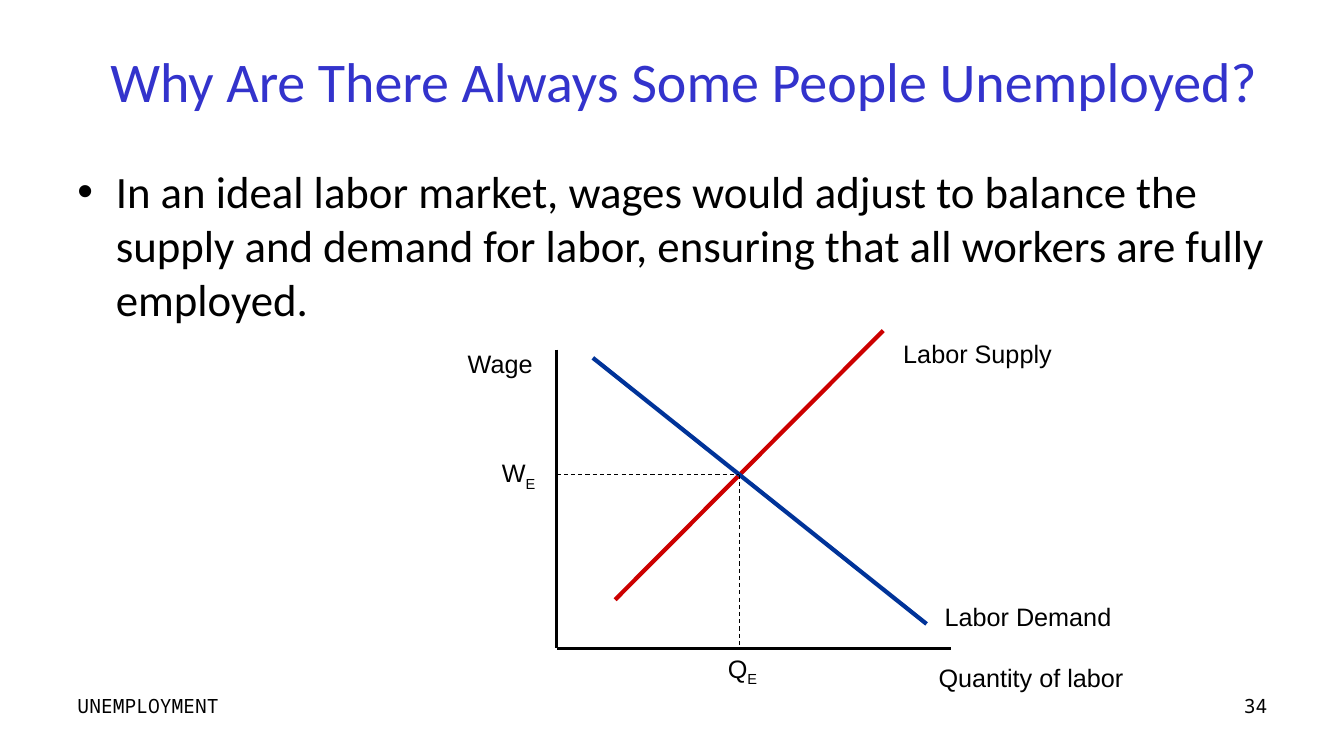
from lxml import etree
from pptx import Presentation
from pptx import util as u
from pptx.dml.color import RGBColor
from pptx.enum import dml, shapes, text
from pptx.oxml.ns import qn

EMU_PER_PX = 9144  # 100 px to the inch
BLACK = "000000"
AXIS_LEFT, AXIS_BOTTOM = 552, 643
EQUILIBRIUM_X, EQUILIBRIUM_Y = 733, 471


def px(length):
    return u.Emu(length * EMU_PER_PX)


def color(hex_string):
    return RGBColor.from_string(hex_string)


def style(paragraph, size, font_name, hex_string=BLACK, align=text.PP_ALIGN.LEFT):
    paragraph.alignment = align
    paragraph.font.size = u.Pt(size)
    paragraph.font.name = font_name
    paragraph.font.color.rgb = color(hex_string)


def place_title(slide, content, left, top, width, height):
    title = slide.shapes.title
    title.left, title.top, title.width, title.height = map(px, (left, top, width, height))
    frame = title.text_frame
    frame.text = content
    frame.word_wrap = True
    frame.auto_size = text.MSO_AUTO_SIZE.NONE
    frame.vertical_anchor = text.MSO_ANCHOR.MIDDLE
    paragraph = frame.paragraphs[0]
    paragraph.line_spacing = 0.9
    style(paragraph, 40, "Calibri", "3333CC", text.PP_ALIGN.CENTER)


def add_text(parent, content, left, top, width, height):
    """Add a wrapping text box and return its only paragraph."""
    box = parent.shapes.add_textbox(*map(px, (left, top, width, height)))
    box.text_frame.word_wrap = True
    paragraph = box.text_frame.paragraphs[0]
    paragraph.add_run().text = content
    return paragraph


def add_bullet(paragraph, indent):
    properties = paragraph._p.get_or_add_pPr()
    properties.set("marL", str(px(indent)))
    properties.set("indent", str(px(-indent)))
    etree.SubElement(properties, qn("a:buFont")).set("typeface", "Arial")
    etree.SubElement(properties, qn("a:buChar")).set("char", "•")


def add_label(diagram, content, left, top, width, subscript=""):
    paragraph = add_text(diagram, content, left, top, width, 40)
    style(paragraph, 18, "Arial")
    if subscript:
        run = paragraph.add_run()
        run.text = subscript
        run._r.get_or_add_rPr().set("baseline", "-25000")


def add_line(diagram, start, end, width, hex_string=BLACK, dashed=False):
    connector = diagram.shapes.add_connector(
        shapes.MSO_CONNECTOR.STRAIGHT, *map(px, (*start, *end)))
    connector.line.width = u.Pt(width)
    connector.line.color.rgb = color(hex_string)
    if dashed:
        connector.line.dash_style = dml.MSO_LINE.DASH
    etree.SubElement(connector._element.spPr, qn("a:effectLst"))


def add_labor_market(slide):
    diagram = slide.shapes.add_group_shape()
    origin = (AXIS_LEFT, AXIS_BOTTOM)
    equilibrium = (EQUILIBRIUM_X, EQUILIBRIUM_Y)

    add_line(diagram, (AXIS_LEFT, 347), origin, 2.25)
    add_line(diagram, origin, (943, AXIS_BOTTOM), 2.25)
    add_line(diagram, (610, 595), (876, 328), 3, "CC0000")
    add_line(diagram, (588, 355), (919, 619), 3, "003399")
    add_line(diagram, (AXIS_LEFT, EQUILIBRIUM_Y), equilibrium, 0.75, dashed=True)
    add_line(diagram, equilibrium, (EQUILIBRIUM_X, AXIS_BOTTOM), 0.75, dashed=True)

    add_label(diagram, "Wage", 454, 341, 95)
    add_label(diagram, "Quantity of labor", 921, 652, 205)
    add_label(diagram, "Labor Supply", 886, 331, 172)
    add_label(diagram, "Labor Demand", 927, 592, 192)
    add_label(diagram, "W", 488, 449, 66, subscript="E")
    add_label(diagram, "Q", 712, 643, 66, subscript="E")


def main():
    presentation = Presentation()
    presentation.slide_width, presentation.slide_height = px(1333), px(750)
    slide = presentation.slides.add_slide(presentation.slide_layouts[5])

    place_title(slide, "Why Are There Always Some People Unemployed?", 67, 17, 1222, 133)
    body = add_text(
        slide,
        "In an ideal labor market, wages would adjust to balance the supply and "
        "demand for labor, ensuring that all workers are fully employed.",
        67, 158, 1222, 517)
    style(body, 32, "Calibri")
    add_bullet(body, 38)

    add_labor_market(slide)

    footer = add_text(slide, "UNEMPLOYMENT", 67, 683, 811, 52)
    style(footer, 14, "Noto Sans Mono")
    page_number = add_text(slide, "34", 956, 683, 311, 52)
    style(page_number, 14, "Noto Sans Mono", align=text.PP_ALIGN.RIGHT)

    presentation.save("out.pptx")


if __name__ == "__main__":
    main()
